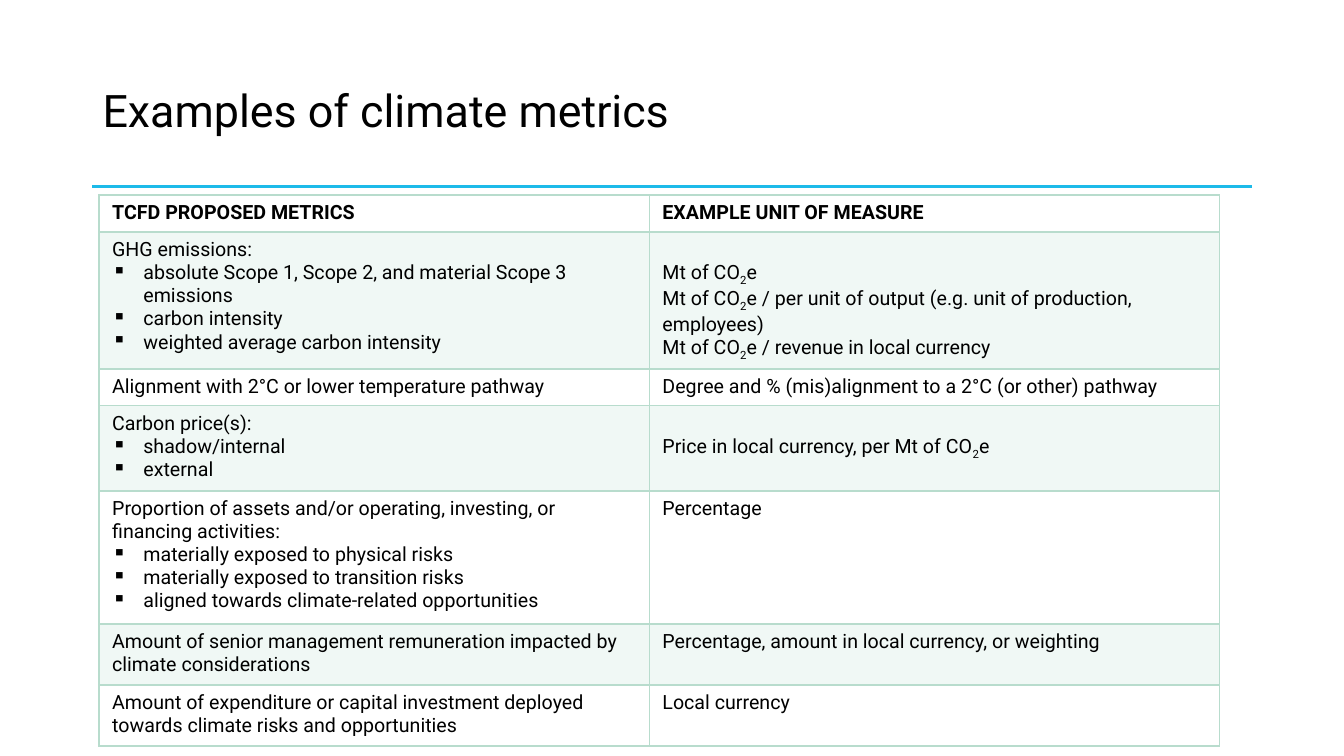
from lxml.etree import SubElement
from pptx import Presentation
from pptx.dml.color import RGBColor
from pptx.enum.shapes import MSO_CONNECTOR
from pptx.enum.text import MSO_ANCHOR, MSO_AUTO_SIZE, PP_ALIGN
from pptx.oxml.ns import qn
from pptx.util import Inches, Pt

HEADER = ("TCFD PROPOSED METRICS", "EXAMPLE UNIT OF MEASURE")
METRICS = [
    (18.12, "GHG emissions:",
     ["absolute Scope 1, Scope 2, and material Scope 3 emissions",
      "carbon intensity", "weighted average carbon intensity"],
     ["Mt of CO₂e",
      "Mt of CO₂e / per unit of output (e.g. unit of production, employees)",
      "Mt of CO₂e / revenue in local currency"]),
    (4.89, "Alignment with 2°C or lower temperature pathway", [],
     ["Degree and % (mis)alignment to a 2°C (or other) pathway"]),
    (11.25, "Carbon price(s):", ["shadow/internal", "external"],
     ["Price in local currency, per Mt of CO₂e"]),
    (17.6, "Proportion of assets and/or operating, investing, or financing activities:",
     ["materially exposed to physical risks", "materially exposed to transition risks",
      "aligned towards climate-related opportunities"],
     ["Percentage"]),
    (8.07, "Amount of senior management remuneration impacted by climate considerations", [],
     ["Percentage, amount in local currency, or weighting"]),
    (8.07, "Amount of expenditure or capital investment deployed "
     "towards climate risks and opportunities", [],
     ["Local currency"]),
]
BESIDE_BULLETS = ("GHG emissions:", "Carbon price(s):")


def color(value):
    """Turn a hex string into a colour."""
    return RGBColor.from_string(value)


def write(paragraph, text, size=14, font="Roboto", fill="000000", bold=False, bullet=False):
    """Write formatted text, lowering the 2 of each ₂ mark as a subscript."""
    if bullet:
        properties = paragraph._p.get_or_add_pPr()
        properties.set("marL", str(Inches(0.31)))
        properties.set("indent", str(-Inches(0.31)))
        SubElement(properties, qn("a:buChar"), char="▪")
    for index, part in enumerate(text.replace("₂", "|2|").split("|")):
        run = paragraph.add_run()
        run.text = part
        run.font.size = Pt(size)
        run.font.name = font
        run.font.bold = bold
        run.font.color.rgb = color(fill)
        if index % 2:
            run._r.get_or_add_rPr().set("baseline", "-25000")


class Deck:
    """Hold the style and the current slide, on a grid of 100 columns and 100 rows."""

    accent = "1CBAE9"
    border = "B8DCCD"

    def __init__(self):
        """Open a wide presentation with one title slide."""
        self.presentation = Presentation()
        self.presentation.slide_width = Inches(13.33)
        self.presentation.slide_height = Inches(7.5)
        self.slide = self.presentation.slides.add_slide(self.presentation.slide_layouts[5])

    def across(self, columns):
        """Convert grid columns to a length."""
        return round(self.presentation.slide_width * columns / 100)

    def down(self, rows):
        """Convert grid rows to a length."""
        return round(self.presentation.slide_height * rows / 100)

    def title(self, text, left, top, width, height):
        """Place and fill the title."""
        shape = self.slide.shapes.title
        shape.left, shape.top = self.across(left), self.down(top)
        shape.width, shape.height = self.across(width), self.down(height)
        frame = shape.text_frame
        frame.word_wrap = True
        frame.auto_size = MSO_AUTO_SIZE.NONE
        frame.vertical_anchor = MSO_ANCHOR.MIDDLE
        paragraph = frame.paragraphs[0]
        paragraph.alignment = PP_ALIGN.LEFT
        paragraph.line_spacing = 0.9
        write(paragraph, text, size=32)

    def rule(self, left, top, width):
        """Draw a horizontal accent line."""
        line = self.slide.shapes.add_connector(
            MSO_CONNECTOR.STRAIGHT, self.across(left), self.down(top),
            self.across(left + width), self.down(top))
        line.line.color.rgb = color(self.accent)
        line.line.width = Pt(1.5)
        SubElement(line._element.spPr, qn("a:effectLst"))

    def table(self, left, top, widths, heights):
        """Add a plain table with the given grid sizes."""
        shape = self.slide.shapes.add_table(
            len(heights), len(widths), self.across(left), self.down(top),
            self.across(sum(widths)), self.down(sum(heights)))
        table = shape.table
        table.first_row = table.horz_banding = False
        for column, width in zip(table.columns, widths):
            column.width = self.across(width)
        for row, height in zip(table.rows, heights):
            row.height = self.down(height)
        return table

    def cell(self, cell, lines, bullets=(), tinted=False, bold=False, top=0.06, edges=(1, 1)):
        """Fill a cell; edges are its top and bottom border widths."""
        cell.margin_left = cell.margin_right = Inches(0.13)
        cell.margin_top, cell.margin_bottom = Inches(top), Inches(0.06)
        properties = cell._tc.get_or_add_tcPr()
        for side, width in zip("LRTB", (1, 1, *edges)):
            line = SubElement(properties, qn(f"a:ln{side}"), w=str(Pt(width)))
            SubElement(SubElement(line, qn("a:solidFill")), qn("a:srgbClr"), val=self.border)
        if tinted:
            cell.fill.solid()
            cell.fill.fore_color.rgb = color(self.border)
            tint = properties.find(qn("a:solidFill")).find(qn("a:srgbClr"))
            SubElement(tint, qn("a:alpha"), val="20000")
        else:
            cell.fill.background()
        frame = cell.text_frame
        for index, text in enumerate([*lines, *bullets]):
            paragraph = frame.add_paragraph() if index else frame.paragraphs[0]
            write(paragraph, text, bold=bold, bullet=index >= len(lines))


def main():
    """Build the climate metrics slide."""
    deck = Deck()
    deck.rule(6.88, 24.67, 86.25)
    deck.title("Examples of climate metrics", 6.88, 5.32, 86.25, 19.33)
    heights = [4.89] + [metric[0] for metric in METRICS]
    table = deck.table(7.37, 25.8, [40.95, 42.45], heights)
    for column, heading in enumerate(HEADER):
        deck.cell(table.cell(0, column), [heading], bold=True, edges=(1, 2))
    for row, (_, metric, bullets, units) in enumerate(METRICS, 1):
        look = {"tinted": row in (1, 3, 5), "edges": (2 if row == 1 else 1, 1)}
        deck.cell(table.cell(row, 0), [metric], bullets, **look)
        top = 0.29 if metric in BESIDE_BULLETS else 0.06
        deck.cell(table.cell(row, 1), units, top=top, **look)
    deck.presentation.save("out.pptx")


if __name__ == "__main__":
    main()
